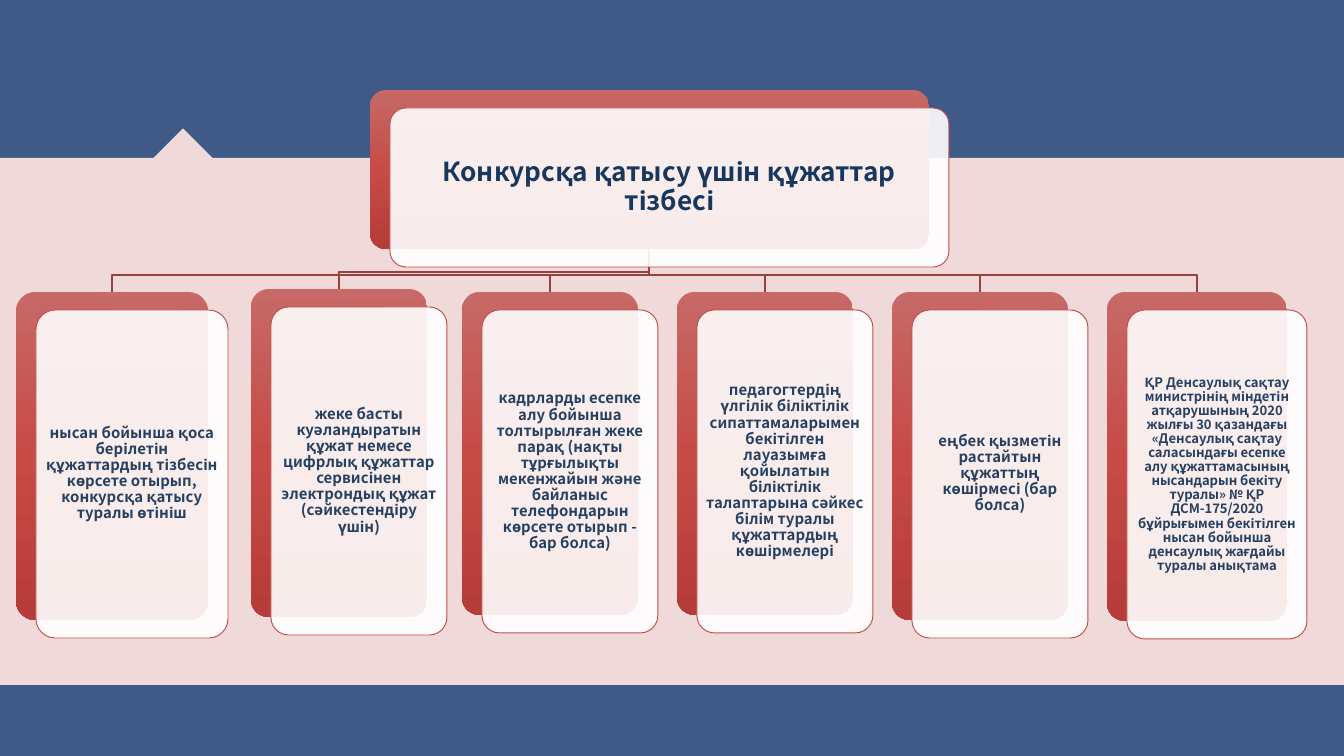
import copy

import pptx
import pptx.dml.color
import pptx.enum.shapes
import pptx.enum.text
import pptx.oxml
import pptx.oxml.ns
import pptx.util

SHAPES = pptx.enum.shapes.MSO_SHAPE
PX = 914400 / 134.4
WIDTH, HEIGHT = 1344, 756
FONT = "Noto Sans CJK SC"
COLORS = {
    "navy": "3F5A87", "blush": "F0D9D9", "branch": "9A403E", "border": "C0504D",
    "white": "FFFFFF", "heading": "17375E", "text": "254061",
}
RED_STOPS = [(0, "C76967"), (0.5, "C64B47"), (1, "B63C39")]
OFFSET_X, OFFSET_Y = 20, 18
TEXT_MARGIN = 5
ELBOW_RISE = 17

HEADING = "Конкурсқа қатысу үшін құжаттар тізбесі"
HEAD_BOX = (370, 90, 559, 159)
# Each card: left, top, width, height, font size, text
CARDS = [
    (16, 292, 192, 328, 8,
     "нысан бойынша қоса берілетін құжаттардың тізбесін көрсете отырып, "
     "конкурсқа қатысу туралы өтініш"),
    (251, 289, 176, 328, 8,
     "жеке басты куәландыратын құжат немесе цифрлық құжаттар сервисінен "
     "электрондық құжат (сәйкестендіру үшін)"),
    (462, 292, 176, 323, 8,
     "кадрларды есепке алу бойынша толтырылған жеке парақ (нақты тұрғылықты "
     "мекенжайын және байланыс телефондарын көрсете отырып - бар болса)"),
    (677, 292, 176, 323, 8,
     "педагогтердің үлгілік біліктілік сипаттамаларымен бекітілген лауазымға "
     "қойылатын біліктілік талаптарына сәйкес білім туралы құжаттардың көшірмелері"),
    (892, 292, 176, 328, 8,
     "еңбек қызметін растайтын құжаттың көшірмесі (бар болса)"),
    (1107, 292, 180, 329, 7,
     "ҚР Денсаулық сақтау министрінің міндетін атқарушының 2020 жылғы 30 қазандағы "
     "«Денсаулық сақтау саласындағы есепке алу құжаттамасының нысандарын бекіту туралы» "
     "№ ҚР ДСМ-175/2020 бұйрығымен бекітілген нысан бойынша денсаулық жағдайы "
     "туралы анықтама"),
]


def px(length):
    return pptx.util.Emu(round(length * PX))


def rgb(hex_color):
    return pptx.dml.color.RGBColor.from_string(hex_color)


class DiagramPage:
    """Holds the current slide and draws its elements in one style."""

    def __init__(self, deck):
        self.page = deck.slides.add_slide(deck.slide_layouts[5])

    def shape(self, kind, left, top, width, height, color=None):
        shape = self.page.shapes.add_shape(kind, px(left), px(top), px(width), px(height))
        shape.shadow.inherit = False
        shape.line.fill.background()
        if color:
            shape.fill.solid()
            shape.fill.fore_color.rgb = rgb(COLORS[color])
        return shape

    def branch(self, start_x, start_y, end_x, end_y):
        """Draw a right-angled line from the heading down to a card."""
        elbow_y = end_y - ELBOW_RISE
        builder = self.page.shapes.build_freeform(start_x, start_y, scale=PX)
        builder.add_line_segments(
            [(start_x, elbow_y), (end_x, elbow_y), (end_x, end_y)], close=False)
        line = builder.convert_to_shape()
        line.shadow.inherit = False
        line.fill.background()
        line.line.color.rgb = rgb(COLORS["branch"])
        line.line.width = pptx.util.Pt(1)

    def red_back(self, left, top, width, height):
        back = self.shape(SHAPES.ROUNDED_RECTANGLE, left, top, width, height)
        back.adjustments[0] = 0.1
        back.fill.gradient()
        back.fill.gradient_angle = 270
        stops = back.element.find(".//" + pptx.oxml.ns.qn("a:gsLst"))
        stops.insert(1, copy.deepcopy(stops[0]))
        for stop, (position, color) in zip(back.fill.gradient_stops, RED_STOPS):
            stop.position = position
            stop.color.rgb = rgb(color)

    def white_front(self, left, top, width, height):
        front = self.shape(SHAPES.ROUNDED_RECTANGLE, left, top, width, height, "white")
        front.adjustments[0] = 0.1
        front.line.color.rgb = rgb(COLORS["border"])
        front.line.width = pptx.util.Pt(0.5)
        color = front.element.find(".//" + pptx.oxml.ns.qn("a:srgbClr"))
        alpha = pptx.oxml.parse_xml(
            f'<a:alpha {pptx.oxml.ns.nsdecls("a")} val="90000"/>')
        color.append(alpha)

    def card(self, left, top, width, height):
        """Draw both layers and return the area for the text."""
        self.red_back(left, top, width, height)
        left, top = left + OFFSET_X, top + OFFSET_Y
        self.white_front(left, top, width, height)
        return (left + TEXT_MARGIN, top + TEXT_MARGIN,
                width - 2 * TEXT_MARGIN, height - 2 * TEXT_MARGIN)

    def set_text(self, box, text, size, color, inset):
        frame = box.text_frame
        frame.text = text
        frame.word_wrap = True
        frame.auto_size = pptx.enum.text.MSO_AUTO_SIZE.NONE
        frame.vertical_anchor = pptx.enum.text.MSO_ANCHOR.MIDDLE
        frame.margin_left = frame.margin_right = px(inset)
        frame.margin_top = frame.margin_bottom = px(inset)
        para = frame.paragraphs[0]
        para.alignment = pptx.enum.text.PP_ALIGN.CENTER
        para.line_spacing = 0.9
        para.font.name = FONT
        para.font.size = pptx.util.Pt(size)
        para.font.bold = True
        para.font.color.rgb = rgb(COLORS[color])

    def heading(self, area, text):
        title = self.page.shapes.title
        title.left, title.top, title.width, title.height = map(px, area)
        self.set_text(title, text, 14, "heading", 8)
        title.element.getparent().append(title.element)  # bring to front

    def label(self, area, text, size):
        box = self.page.shapes.add_textbox(*map(px, area))
        self.set_text(box, text, size, "text", 4)


def main():
    deck = pptx.Presentation()
    deck.slide_width, deck.slide_height = px(WIDTH), px(HEIGHT)
    page = DiagramPage(deck)

    page.shape(SHAPES.RECTANGLE, 0, 0, WIDTH, HEIGHT, "navy")
    page.shape(SHAPES.RECTANGLE, 0, 158, WIDTH, 527, "blush")
    page.shape(SHAPES.RIGHT_TRIANGLE, 162, 137, 42, 42, "blush").rotation = 135

    head_left, head_top, head_width, head_height = HEAD_BOX
    for left, top, width, *_ in reversed(CARDS):
        page.branch(head_left + head_width // 2, head_top + head_height,
                    left + width // 2, top)

    page.heading(page.card(*HEAD_BOX), HEADING)
    for left, top, width, height, size, text in CARDS:
        page.label(page.card(left, top, width, height), text, size)

    deck.save("out.pptx")


if __name__ == "__main__":
    main()
